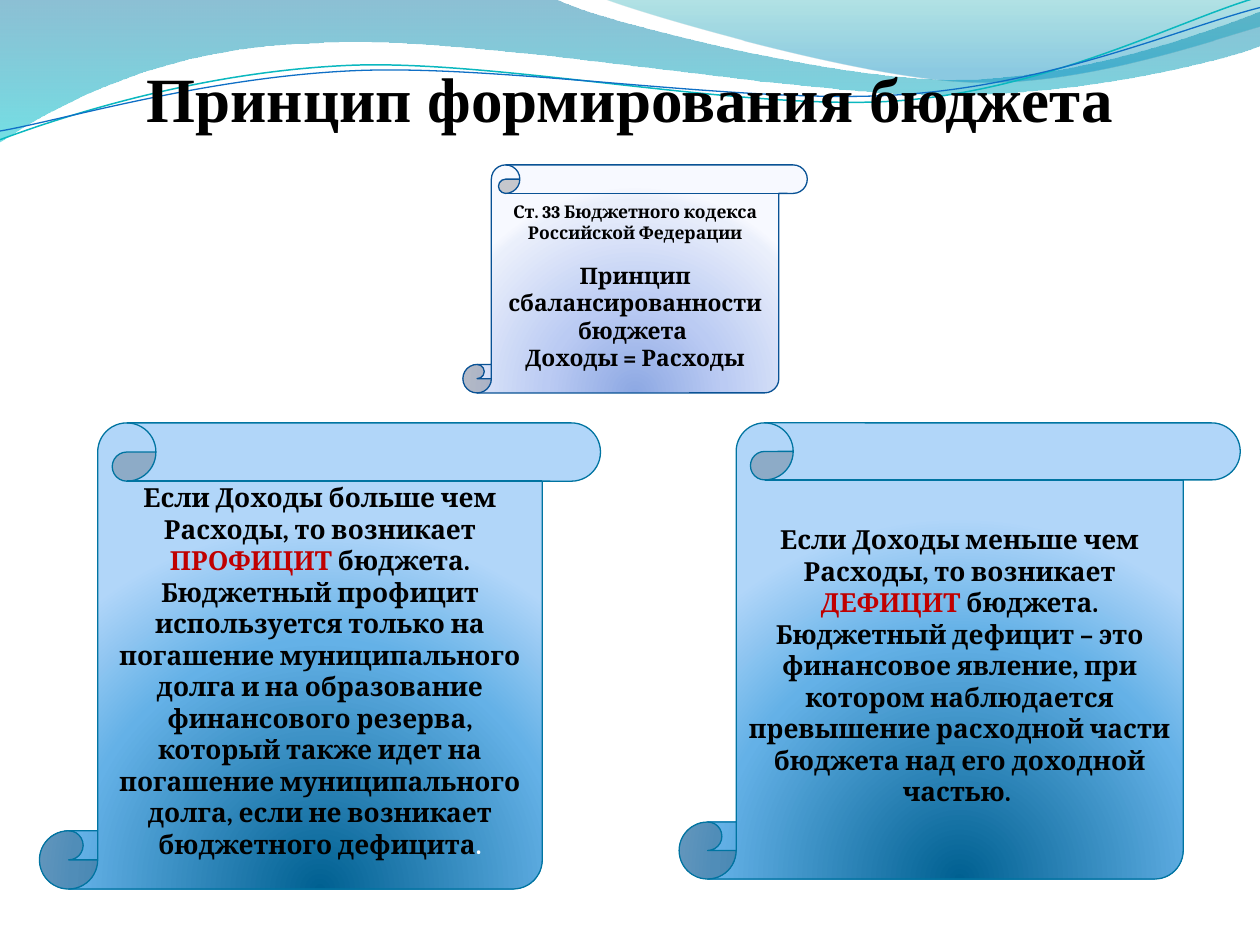
import pptx
import pptx.dml.color
import pptx.enum.shapes
import pptx.enum.text
import pptx.oxml
import pptx.oxml.ns
import pptx.util

SLIDE_WIDTH = pptx.util.Inches(10)
SLIDE_HEIGHT = pptx.util.Inches(7.5)
LINE_TILT = 357.3

COLORS = {
    "text": "000000", "accent": "C00000", "white": "FFFFFF",
    "teal": "0AB8BF", "blue": "0F6FC6",
    "law_edge": "095295", "case_edge": "0074A1",
}
GRADIENTS = {
    "wave": [(0, "0074A1", 45), (100, "00C6CF", 55)],
    "crest": [(0, "00A1A9", 30), (80, "008BBF", 45)],
    "law": [(0, "8DA8E3", 100), (43, "BBCBF3", 100),
            (93, "EAEFFB", 100), (100, "F7F9FF", 100)],
    "case": [(0, "006091", 100), (68, "64B1E7", 100), (100, "B1D6F9", 100)],
}
DOWNWARD = '<a:lin ang="5400000" scaled="0"/>'
FROM_BELOW = ('<a:path path="circle"><a:fillToRect l="50000" t="130000" '
              'r="50000" b="-30000"/></a:path>')

WAVE = [
    [(0, 0)], [(44, -0.13)],
    [(47.6, 2.27), (66.4, 8.4), (75.8, 8.4)],
    [(85.3, 8.4), (95.8, 3.47), (100, 1.2)],
    [(100.1, 4.8)],
    [(98.3, 5.87), (87, 10.13), (74.6, 10)],
    [(62.2, 10), (38.2, 3.73), (25.7, 4.53)],
    [(12.9, 4.8), (4.6, 11.07), (-0.1, 15.07)],
    [(0, 0)],
]
CREST = [
    [(47.9, -0.13)],
    [(50.9, 1.47), (68.2, 8.27), (76.9, 8.67)],
    [(85.6, 9.2), (96.1, 4.27), (100, 2.8)],
    [(100, 0)], [(47.9, -0.13)],
]
TEAL_LINE = [
    [(-0.2, 11.65)],
    [(4.7, 9.56), (15.8, 5.45), (27.8, 5.53)],
    [(39.6, 5.61), (59.1, 12.45), (71.2, 12.01)],
    [(83.2, 11.56), (94, 4.76), (100, 2.88)],
]
BLUE_LINE = [
    [(-0.2, 10.73)],
    [(4.6, 9.96), (16.4, 6.03), (28.3, 6.11)],
    [(40.3, 6.2), (59.6, 11.81), (71.6, 11.36)],
    [(83.5, 11.04), (94.2, 5.57), (100.2, 3.95)],
]


def rgb(name):
    return pptx.dml.color.RGBColor.from_string(COLORS[name])


def across(percent):
    return round(SLIDE_WIDTH * percent / 100)


def down(percent):
    return round(SLIDE_HEIGHT * percent / 100)


def place(left, top, width, height):
    return across(left), down(top), across(width), down(height)


def fill_gradient(shape, gradient, direction):
    stops = "".join(
        f'<a:gs pos="{position * 1000}"><a:srgbClr val="{color}">'
        f'<a:alpha val="{opacity * 1000}"/></a:srgbClr></a:gs>'
        for position, color, opacity in GRADIENTS[gradient])
    shape.fill.background()
    properties = shape.element.spPr
    properties.replace(
        properties.find(pptx.oxml.ns.qn("a:noFill")),
        pptx.oxml.parse_xml(
            f'<a:gradFill {pptx.oxml.ns.nsdecls("a")} rotWithShape="1">'
            f'<a:gsLst>{stops}</a:gsLst>{direction}</a:gradFill>'))


def set_line(shape, color, width):
    shape.line.color.rgb = rgb(color)
    shape.line.width = pptx.util.Pt(width)


def bend(outline, segments):
    steps = iter(list(outline.element.iter(pptx.oxml.ns.qn("a:lnTo"))))
    for segment in segments[1:]:
        parts = [next(steps) for _ in segment]
        if len(parts) == 3:
            curve = pptx.oxml.parse_xml(
                f'<a:cubicBezTo {pptx.oxml.ns.nsdecls("a")}/>')
            parts[0].addprevious(curve)
            for part in parts:
                curve.append(part[0])
                part.getparent().remove(part)


def add_outline(slide, segments, close):
    start, *rest = [(across(x), down(y))
                    for segment in segments for x, y in segment]
    builder = slide.shapes.build_freeform(*start)
    builder.add_line_segments(rest, close=close)
    outline = builder.convert_to_shape()
    bend(outline, segments)
    outline.shadow.inherit = False
    return outline


def add_wave(slide, segments, gradient):
    wave = add_outline(slide, segments, True)
    fill_gradient(wave, gradient, DOWNWARD)
    wave.line.fill.background()


def add_wave_line(slide, segments, color, width):
    curve = add_outline(slide, segments, False)
    curve.rotation = LINE_TILT
    curve.fill.background()
    set_line(curve, color, width)


def write_paragraph(paragraph, font, size, runs):
    paragraph.alignment = pptx.enum.text.PP_ALIGN.CENTER
    paragraph.font.name = font
    paragraph.font.size = pptx.util.Pt(size)
    paragraph.font.bold = True
    for text, color in runs:
        run = paragraph.add_run()
        run.text = text
        run.font.color.rgb = rgb(color)
    return paragraph


def add_title(slide, text):
    title = slide.shapes.add_textbox(*place(5, 4, 90, 10.27)).text_frame
    title.word_wrap = True
    title.vertical_anchor = pptx.enum.text.MSO_ANCHOR.BOTTOM
    title.margin_left = title.margin_right = title.margin_bottom = 0
    write_paragraph(title.paragraphs[0], "Times New Roman", 36, [(text, "text")])


def add_scroll(slide, box, gradient, edge):
    scroll = slide.shapes.add_shape(
        pptx.enum.shapes.MSO_SHAPE.VERTICAL_SCROLL, *place(*box))
    scroll.shadow.inherit = False
    fill_gradient(scroll, gradient, FROM_BELOW)
    set_line(scroll, edge, 0.75)
    scroll.text_frame.word_wrap = True
    scroll.text_frame.vertical_anchor = pptx.enum.text.MSO_ANCHOR.MIDDLE
    return scroll.text_frame


def add_law(slide):
    law = add_scroll(slide, (36.74, 17.45, 27.34, 24.13), "law", "law_edge")
    write_paragraph(law.paragraphs[0], "Cambria", 10, [
        ("Ст. 33 Бюджетного кодекса Российской Федерации", "text")])
    principle = write_paragraph(law.add_paragraph(), "Cambria", 13, [
        ("Принцип сбалансированности бюджета ", "text")])
    principle.space_before = pptx.util.Pt(10.8)
    write_paragraph(law.add_paragraph(), "Cambria", 13, [
        ("Доходы = Расходы", "text")])


def add_case(slide, left, height, comparison, outcome, explanation):
    case = add_scroll(slide, (left, 44.75, 44.53, height), "case", "case_edge")
    return write_paragraph(case.paragraphs[0], "Cambria", 15, [
        (f"Если Доходы {comparison} чем Расходы, то возникает ", "text"),
        (outcome, "accent"),
        (f" бюджета. {explanation}", "text")])


def main():
    deck = pptx.Presentation()
    deck.slide_width, deck.slide_height = SLIDE_WIDTH, SLIDE_HEIGHT
    slide = deck.slides.add_slide(deck.slide_layouts[6])

    add_wave(slide, WAVE, "wave")
    add_wave(slide, CREST, "crest")
    add_wave_line(slide, TEAL_LINE, "teal", 0.85)
    add_wave_line(slide, BLUE_LINE, "blue", 0.75)
    add_title(slide, "Принцип формирования бюджета")
    add_law(slide)
    surplus = add_case(
        slide, 3.13, 49.33, "больше", "ПРОФИЦИТ",
        "Бюджетный профицит используется только на погашение муниципального "
        "долга и на образование финансового резерва, который также идет на "
        "погашение муниципального долга, если не возникает бюджетного дефицита")
    full_stop = surplus.add_run()
    full_stop.text = "."
    full_stop.font.size = pptx.util.Pt(14)
    full_stop.font.color.rgb = rgb("white")
    add_case(
        slide, 53.9, 48.27, "меньше", "ДЕФИЦИТ",
        "Бюджетный дефицит – это финансовое явление, при котором наблюдается "
        "превышение расходной части бюджета над его доходной частью. ")
    deck.save("out.pptx")


if __name__ == "__main__":
    main()
